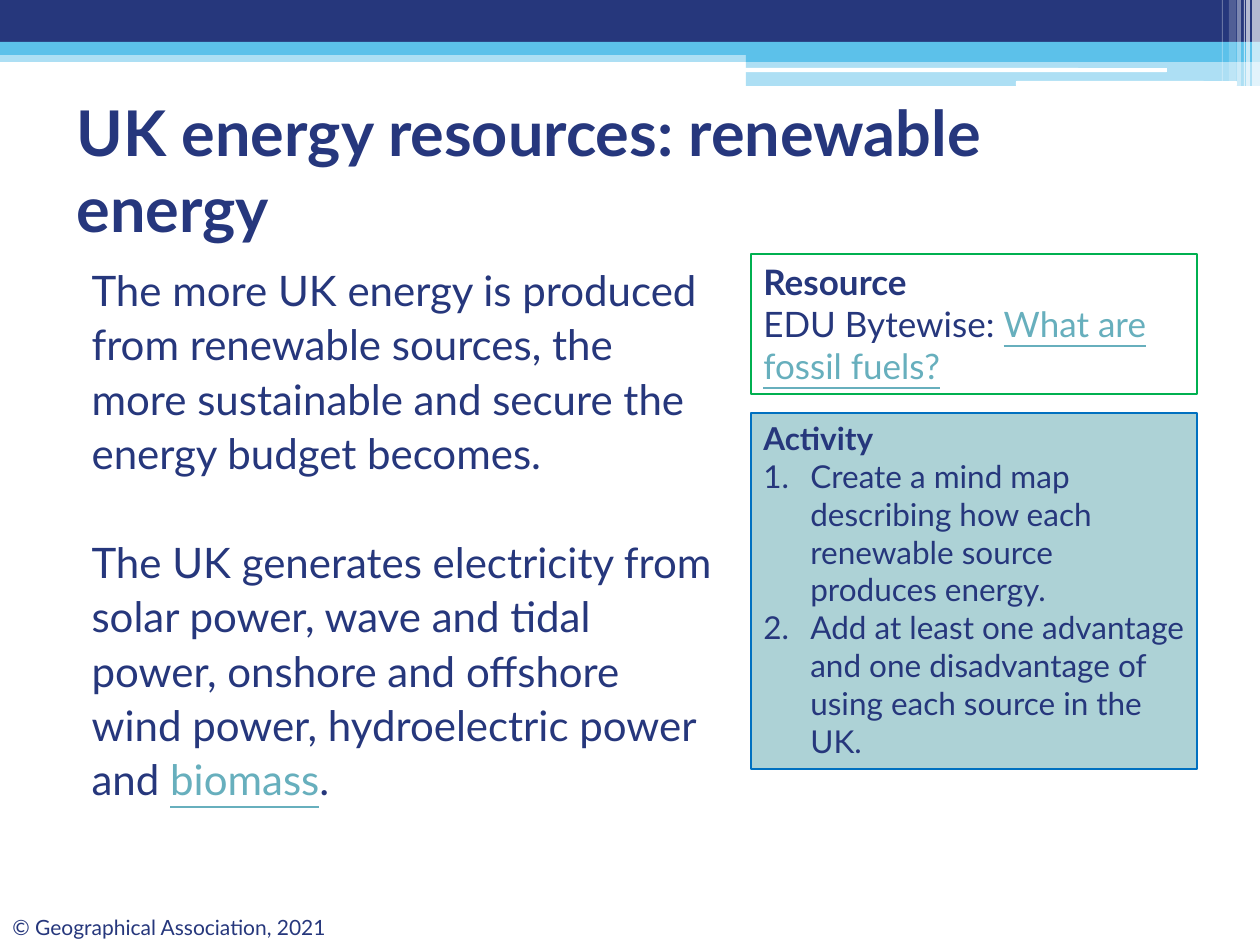
import pptx
import pptx.dml.color
import pptx.enum.shapes
import pptx.enum.text
import pptx.util
from pptx.oxml.ns import qn
from lxml import etree

PX = pptx.util.Inches(1) / 126
COLORS = {
    "navy": "26377C", "title": "26377D", "sky": "5CC1EA", "white": "FFFFFF",
    "link": "67AFBD", "panel": "ADD2D6", "blue": "0070C0", "green": "00B050",
}
SHAPES = pptx.enum.shapes.MSO_SHAPE
ANCHOR = pptx.enum.text.MSO_ANCHOR
ALIGN = pptx.enum.text.PP_ALIGN


def add_box(kind, box, fill=None, alpha=100, line=None, line_width=0):
    shape = slide.shapes.add_shape(kind, *[round(value * PX) for value in box])
    shape.shadow.inherit = False
    if fill:
        shape.fill.solid()
        shape.fill.fore_color.rgb = pptx.dml.color.RGBColor.from_string(COLORS[fill])
        if alpha < 100:
            color = shape.fill._xPr.find(qn("a:solidFill"))[0]
            etree.SubElement(color, qn("a:alpha"), val=str(alpha * 1000))
    else:
        shape.fill.background()
    if line:
        shape.line.color.rgb = pptx.dml.color.RGBColor.from_string(COLORS[line])
        shape.line.width = pptx.util.Pt(line_width)
    else:
        shape.line.fill.background()
    return shape


def write_text(shape, paragraphs, size, anchor=ANCHOR.TOP, wrap=True):
    frame = shape.text_frame
    frame.word_wrap = wrap
    frame.auto_size = pptx.enum.text.MSO_AUTO_SIZE.NONE
    frame.vertical_anchor = anchor
    for index, (layout, runs) in enumerate(paragraphs):
        paragraph = frame.paragraphs[0] if index == 0 else frame.add_paragraph()
        properties = paragraph._p.get_or_add_pPr()
        properties.set("marL", str(round(layout.get("margin", 0) * PX)))
        properties.set("indent", str(round(layout.get("indent", 0) * PX)))
        if layout.get("numbered"):
            etree.SubElement(properties, qn("a:buFont"), typeface="+mj-lt")
            etree.SubElement(properties, qn("a:buAutoNum"), type="arabicPeriod")
        else:
            etree.SubElement(properties, qn("a:buNone"))
        paragraph.alignment = ALIGN.LEFT
        paragraph.line_spacing = layout.get("spacing", 1.0)
        paragraph.space_before = pptx.util.Pt(layout.get("before", 0))
        for text, color, font_values in runs:
            run = paragraph.add_run()
            run.text = text
            run.font.color.rgb = pptx.dml.color.RGBColor.from_string(COLORS[color])
            values = {"name": "Lato", "size": pptx.util.Pt(size), "bold": False, **font_values}
            for name, value in values.items():
                setattr(run.font, name, value)


presentation = pptx.Presentation()
presentation.slide_width = pptx.util.Inches(10)
presentation.slide_height = pptx.util.Inches(7.5)
slide = presentation.slides.add_slide(presentation.slide_layouts[1])

BOLD = {"bold": True}
LINK = {"underline": True}

bands = [
    ((0, 50, 1260, 12), "sky", 50),
    ((0, 0, 1260, 42), "navy", 100),
    ((0, 42, 1260, 13), "sky", 100),
    ((746, 49, 514, 13), "sky", 100),
    ((746, 62, 514, 24), "sky", 50),
]
for box, fill, alpha in bands:
    add_box(SHAPES.RECTANGLE, box, fill, alpha)

for box in [(745, 68, 422, 4), (1016, 81, 221, 5)]:
    add_box(SHAPES.ROUNDED_RECTANGLE, box, "white")

stripes = [
    (1252, 8, 86, 65), (1246, 4, 86, 65), (1244, 1, 86, 60),
    (1237, 4, 86, 40), (1229, 7, 81, 20), (1222, 1, 81, 30),
]
for left, width, height, alpha in stripes:
    add_box(SHAPES.RECTANGLE, (left, 0, width, height), "white", alpha)

title = slide.shapes.title
body = slide.placeholders[1]
for placeholder, box in [(title, (64, 96, 1134, 147)), (body, (64, 254, 665, 615))]:
    for name, value in zip(("left", "top", "width", "height"), box):
        setattr(placeholder, name, round(value * PX))

write_text(title, [({}, [("UK energy resources: renewable energy", "title", BOLD)])], 36, ANCHOR.MIDDLE)

body_layout = {"margin": 15, "spacing": 1.08}
write_text(body, [
    (body_layout, [("The more UK energy is produced from renewable sources, the more sustainable and secure the energy budget becomes.", "navy", {})]),
    ({**body_layout, "before": 31}, [
        ("The UK generates electricity from solar power, wave and tidal power, onshore and offshore wind power, hydroelectric power and ", "navy", {}),
        ("biomass", "link", LINK),
        (".", "navy", {}),
    ]),
], 24)

activity = add_box(SHAPES.RECTANGLE, (751, 413, 446, 356), "panel", line="blue", line_width=0.75)
steps = [
    "Create a mind map describing how each renewable source produces energy.",
    "Add at least one advantage and one disadvantage of using each source in the UK.",
]
step_layout = {"margin": 47, "indent": -47, "numbered": True}
write_text(activity, [({}, [("Activity", "navy", BOLD)])]
           + [(step_layout, [(step, "navy", {})]) for step in steps], 18)

resource = add_box(SHAPES.RECTANGLE, (751, 254, 446, 140), line="green", line_width=1.5)
write_text(resource, [
    ({}, [("Resource", "navy", BOLD)]),
    ({}, [("EDU Bytewise: ", "navy", {}), ("What are fossil fuels?", "link", LINK)]),
], 20)

footer = slide.shapes.add_textbox(*[round(value * PX) for value in (0, 908, 362, 37)])
write_text(footer, [({}, [("© Geographical Association, 2021", "navy", {})])], 12, wrap=False)

presentation.save("out.pptx")
